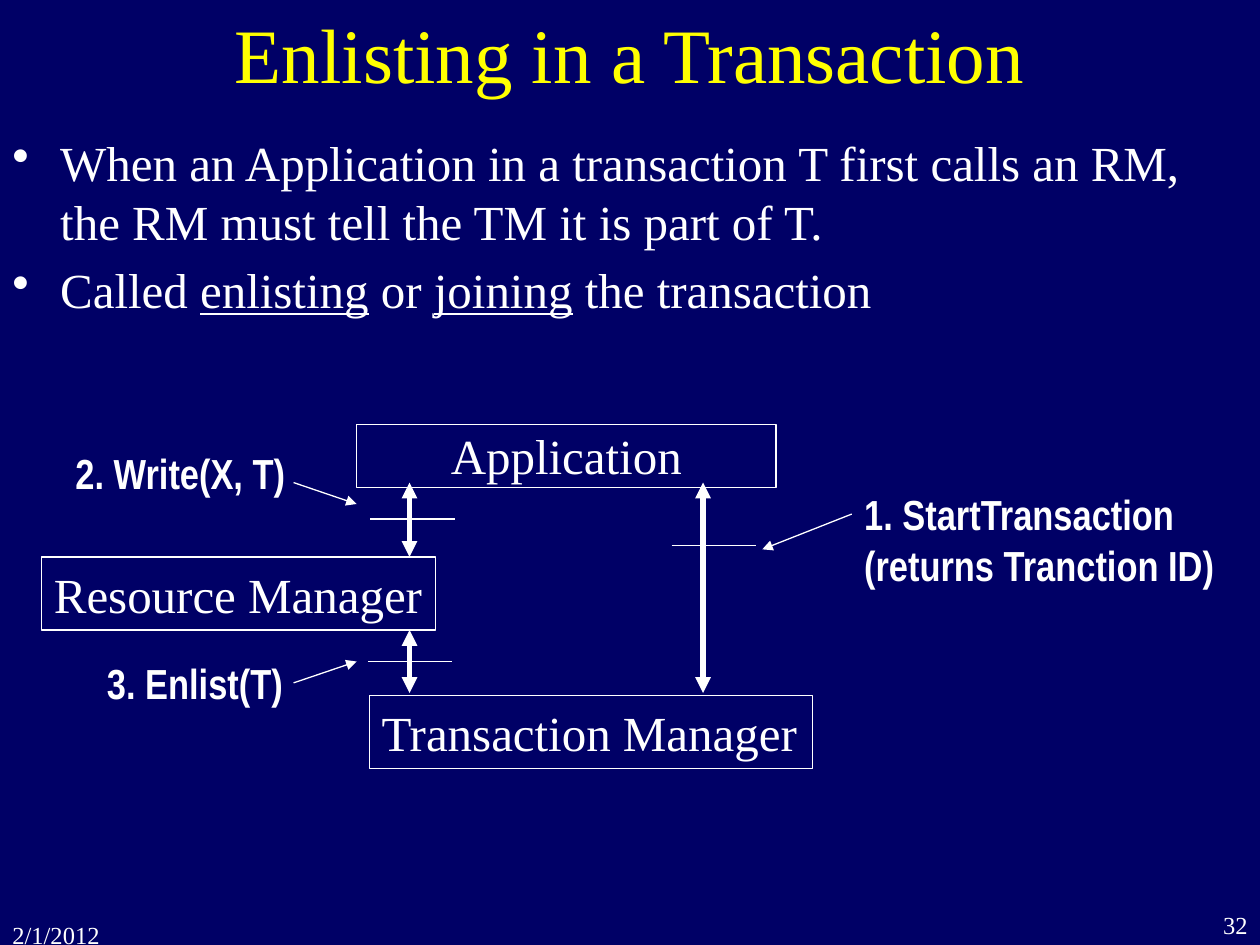
from lxml import etree
from pptx import Presentation
from pptx.dml.color import RGBColor
from pptx.enum import shapes, text
from pptx.oxml import ns
from pptx.util import Inches, Pt

NAVY, WHITE, YELLOW = "000066", "FFFFFF", "FFFF00"
SERIF, NARROW = "Times New Roman", "Arial Narrow"
LEFT, CENTER, RIGHT = text.PP_ALIGN.LEFT, text.PP_ALIGN.CENTER, text.PP_ALIGN.RIGHT


def color(hex_value):
    return RGBColor.from_string(hex_value)


def inches(values):
    return [Inches(value) for value in values]


def style(paragraph, size, font=SERIF, ink=WHITE, bold=False, align=LEFT):
    paragraph.alignment = align
    paragraph.font.name = font
    paragraph.font.size = Pt(size)
    paragraph.font.bold = bold
    paragraph.font.color.rgb = color(ink)


def add_text(slide, box, lines, size, wrap=False, anchor=text.MSO_ANCHOR.TOP, **look):
    frame = slide.shapes.add_textbox(*inches(box)).text_frame
    frame.word_wrap = wrap
    frame.vertical_anchor = anchor
    frame.text = lines
    for paragraph in frame.paragraphs:
        style(paragraph, size, **look)


def add_box(slide, box, name="", fill=None):
    node = slide.shapes.add_shape(shapes.MSO_SHAPE.RECTANGLE, *inches(box))
    node.shadow.inherit = False
    if fill:
        node.fill.solid()
        node.fill.fore_color.rgb = color(fill)
    else:
        node.fill.background()
    node.line.color.rgb = color(WHITE)
    node.line.width = Pt(0.75)
    if name:
        node.text_frame.word_wrap = False
        node.text_frame.text = name
        style(node.text_frame.paragraphs[0], 28)


def add_line(slide, start, end, width=0.75, arrows=()):
    """Draw a line; arrows names the ends with a triangle, headEnd before tailEnd."""
    line = slide.shapes.add_connector(
        shapes.MSO_CONNECTOR.STRAIGHT, *inches(start + end))
    line.line.color.rgb = color(WHITE)
    line.line.width = Pt(width)
    for arrow in arrows:
        etree.SubElement(line.line._get_or_add_ln(), ns.qn(f"a:{arrow}"), type="triangle")
    etree.SubElement(line._element.spPr, ns.qn("a:effectLst"))


def add_bullets(slide, box, bullets):
    """Each bullet is a list of (words, underlined) pairs."""
    frame = slide.shapes.add_textbox(*inches(box)).text_frame
    frame.word_wrap = True
    for index, parts in enumerate(bullets):
        paragraph = frame.paragraphs[0] if index == 0 else frame.add_paragraph()
        style(paragraph, 28)
        paragraph.space_before = Pt(5.6)
        for words, underlined in parts:
            run = paragraph.add_run()
            run.text = words
            if underlined:
                run.font.underline = True
        properties = paragraph._p.get_or_add_pPr()
        properties.set("marL", str(Inches(0.38)))
        properties.set("indent", str(-Inches(0.38)))
        bullet = etree.Element(ns.qn("a:buChar"), char="•")
        properties.find(ns.qn("a:defRPr")).addprevious(bullet)


def add_diagram(slide, box):
    left, top, width, height = box

    def at(x, y):
        return (left + x, top + y)

    add_box(slide, at(2.6, 2.19) + (3.52, 0.58), "Transaction Manager")
    add_box(slide, at(0, 1.09) + (3.13, 0.58), "Resource Manager", NAVY)
    add_box(slide, at(2.5, 0.04) + (3.33, 0.5))
    add_text(slide, at(3.15, 0) + (2.03, 0.57), "Application", 28, align=CENTER)

    for x, y_start, y_end in [(2.92, 0.5, 1.09), (2.92, 1.67, 2.17), (5.25, 0.5, 2.17)]:
        add_line(slide, at(x, y_start), at(x, y_end), 3, ("headEnd", "tailEnd"))
    for x, y in [(2.61, 0.79), (2.59, 1.92), (5, 1)]:
        add_line(slide, at(x, y), at(x + 0.67, y))

    calls = [
        ("1. StartTransaction\n(returns Tranction ID)", (6.43, 0.5), (2.99, 0.9),
         (6.43, 0.75), (5.72, 1.03)),
        ("2. Write(X, T)", (0.17, 0.17), (1.87, 0.5), (2, 0.5), (2.5, 0.67)),
        ("3. Enlist(T)", (0.42, 1.84), (1.6, 0.5), (2, 2.09), (2.5, 1.92)),
    ]
    for words, corner, size, start, end in calls:
        add_text(slide, at(*corner) + size, words, 24, font=NARROW, bold=True)
        add_line(slide, at(*start), at(*end), arrows=("tailEnd",))


def add_footer(slide):
    add_text(slide, (0, 7.25, 1, 0.25), "2/1/2012", 14, wrap=True)
    add_text(slide, (9.08, 7.17, 0.92, 0.33), "32", 14, wrap=True, align=RIGHT)


def main():
    deck = Presentation()
    deck.slide_width, deck.slide_height = Inches(10), Inches(7.5)
    slide = deck.slides.add_slide(deck.slide_layouts[6])
    slide.background.fill.solid()
    slide.background.fill.fore_color.rgb = color(NAVY)

    add_footer(slide)
    add_text(slide, (0.75, 0, 8.5, 0.83), "Enlisting in a Transaction", 44, wrap=True,
             anchor=text.MSO_ANCHOR.MIDDLE, ink=YELLOW, align=CENTER)
    add_bullets(slide, (0, 1, 10, 1.58), [
        [("When an Application in a transaction T first calls an RM, "
          "the RM must tell the TM it is part of T.", False)],
        [("Called ", False), ("enlisting", True), (" or ", False),
         ("joining", True), (" the transaction", False)],
    ])
    add_diagram(slide, (0.33, 3.33, 9.42, 2.77))
    deck.save("out.pptx")


if __name__ == "__main__":
    main()
